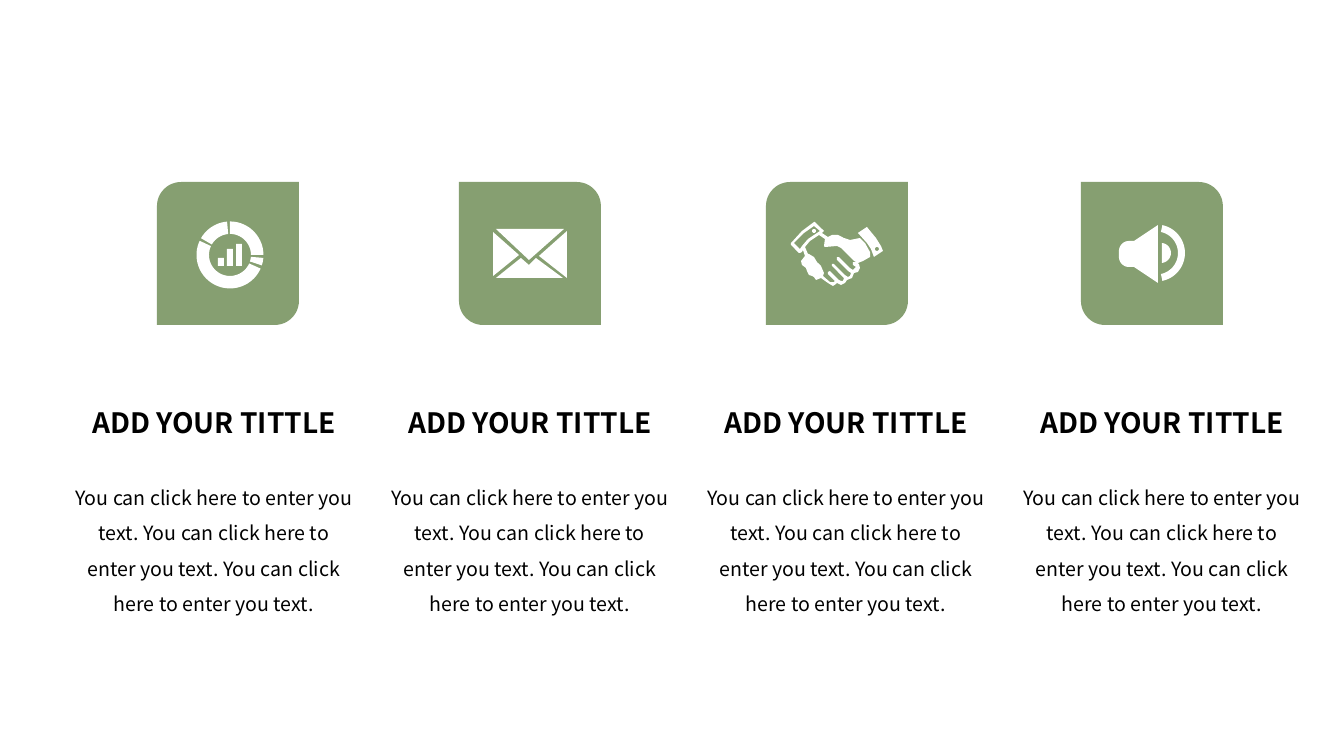
import math

import pptx
import pptx.dml.color
import pptx.enum.shapes
import pptx.enum.text
import pptx.util

SHAPE = pptx.enum.shapes.MSO_SHAPE
FONT = "Noto Sans CJK SC"
GREEN, WHITE, BLACK = "869F71", "FFFFFF", "000000"

TILE_LEFTS = (157, 459, 766, 1081)
TILE_TOP, TILE_W, TILE_H = 182, 142, 143
CAPTION_LEFT, CAPTION_STEP = 63, 316
CAPTION_TOP, CAPTION_W, CAPTION_H = 384, 302, 236
CORNER = 0.17

HEADING = "ADD YOUR TITTLE"
BODY = " ".join(["You can click here to enter you text."] * 3)

# Handshake outlines, in px from the tile's corner
HANDS = [
    (34, 71), (36, 70), (37, 68), (39, 74), (35, 79), (36, 83), (40, 86), (41, 89),
    (43, 93), (46, 94), (48, 95), (50, 98), (55, 96), (62, 101), (67, 104), (70, 102),
    (71, 101), (75, 103), (79, 101), (81, 98), (86, 96), (88, 91), (92, 90), (94, 86),
    (93, 82), (90, 80), (87, 80), (87, 83), (90, 85), (88, 87), (87, 88), (84, 86),
    (73, 75), (71, 75), (71, 78), (82, 89), (85, 91), (84, 94), (82, 95), (79, 93),
    (68, 82), (66, 82), (66, 84), (78, 96), (77, 99), (75, 99), (73, 98), (64, 89),
    (62, 90), (62, 92), (69, 99), (68, 100), (64, 100), (57, 94), (58, 91), (55, 84),
    (51, 80), (48, 75), (43, 72), (42, 72), (39, 65), (44, 59), (53, 53), (59, 57),
    (58, 64), (59, 65), (71, 64), (75, 66), (88, 79), (92, 81), (97, 79), (104, 75),
    (104, 70), (99, 61), (94, 56), (84, 58), (78, 56), (72, 53), (66, 53), (62, 55),
    (56, 51), (58, 49), (57, 48), (49, 40), (48, 40), (36, 49), (25, 61), (25, 63),
    (33, 71),
]
LEFT_CUFF_HOLE = [(38, 51), (48, 44), (54, 49), (42, 57), (36, 64), (34, 67), (28, 61)]
RIGHT_CUFF = [(101, 45), (92, 51), (101, 61), (105, 67), (108, 75), (117, 69), (115, 64),
              (110, 56)]
ENVELOPE = [
    [(34, 50), (60, 73), (34, 94)],
    [(37, 47), (105, 47), (70, 78)],
    [(37, 96), (62, 76), (70, 83), (77, 76), (104, 96)],
    [(80, 74), (108, 49), (108, 96)],
]


def px(length):
    return pptx.util.Emu(round(length * 914400 / 100.8))


def rgb(color):
    return pptx.dml.color.RGBColor.from_string(color)


def paint(part, color):
    part.shadow.inherit = False
    part.fill.solid()
    part.fill.fore_color.rgb = rgb(color)
    part.line.fill.background()
    return part


def preset(shapes, kind, left, top, width, height, color):
    return paint(shapes.add_shape(kind, px(left), px(top), px(width), px(height)), color)


def outline(shapes, left, top, *contours):
    """White outline; contours after the first are holes."""
    builder = None
    for contour in contours:
        points = [(px(x), px(y)) for x, y in contour]
        if builder is None:
            builder = shapes.build_freeform(*points[0])
        else:
            builder.move_to(*points[0])
        builder.add_line_segments(points[1:], close=True)
    return paint(builder.convert_to_shape(px(left), px(top)), WHITE)


def arc(cx, cy, radius, start, end):
    steps = max(4, math.ceil(abs(end - start) / 5))
    angles = [math.radians(start + (end - start) * i / steps) for i in range(steps + 1)]
    return [(cx + radius * math.cos(a), cy + radius * math.sin(a)) for a in angles]


def ring_segment(cx, cy, outer, inner, start, end):
    return arc(cx, cy, outer, start, end) + arc(cx, cy, inner, end, start)


# Icons, each placed from the corner of its tile
def chart_icon(shapes, left, top):
    for start, end in ((24, 205), (210, 265), (5, 18), (-90, 0)):
        outline(shapes, left, top, ring_segment(73, 73, 33.5, 21, start, end))
    for i, height in enumerate((8, 17, 22)):
        preset(shapes, SHAPE.RECTANGLE, left + 61 + 9 * i, top + 84 - height, 6, height, WHITE)


def envelope_icon(shapes, left, top):
    for panel in ENVELOPE:
        outline(shapes, left, top, panel)


def handshake_icon(shapes, left, top):
    outline(shapes, left, top, RIGHT_CUFF, arc(111, 67, 2, 360, 0))
    outline(shapes, left, top, HANDS, LEFT_CUFF_HOLE)
    preset(shapes, SHAPE.OVAL, left + 46, top + 47, 4, 4, WHITE)


def speaker_icon(shapes, left, top):
    horn = [(53, 85), (77, 101), (77, 43), (53, 59)]
    back = arc(48, 69, 10, 270, 180) + arc(48, 75, 10, 180, 90)
    outline(shapes, left, top, horn + back)
    outline(shapes, left, top, arc(80, 71, 10, -85, 85))
    outline(shapes, left, top, ring_segment(75.5, 71, 28.5, 21.5, -78, 78))


def tile(slide, left, top, draw_icon, flipped):
    leaf = preset(slide.shapes, SHAPE.ROUND_2_DIAG_RECTANGLE, left, top, TILE_W, TILE_H, GREEN)
    leaf.adjustments[0] = 0 if flipped else CORNER
    leaf.adjustments[1] = CORNER if flipped else 0
    draw_icon(slide.shapes.add_group_shape().shapes, left, top)


def write(paragraph, text, size, bold=False, before=0):
    paragraph.alignment = pptx.enum.text.PP_ALIGN.CENTER
    paragraph.line_spacing = 1.5
    paragraph.space_before = pptx.util.Pt(before)
    run = paragraph.add_run()
    run.text = text
    run.font.name = FONT
    run.font.size = pptx.util.Pt(size)
    run.font.bold = bold
    run.font.color.rgb = rgb(BLACK)


def caption(slide, left, top, width, height):
    box = slide.shapes.add_textbox(px(left), px(top), px(width), px(height))
    frame = box.text_frame
    frame.word_wrap = True
    frame.auto_size = pptx.enum.text.MSO_AUTO_SIZE.SHAPE_TO_FIT_TEXT
    write(frame.paragraphs[0], HEADING, size=20, bold=True)
    write(frame.add_paragraph(), BODY, size=14, before=25)


def main():
    deck = pptx.Presentation()
    deck.slide_width, deck.slide_height = px(1344), px(756)
    slide = deck.slides.add_slide(deck.slide_layouts[6])
    icons = (chart_icon, envelope_icon, handshake_icon, speaker_icon)
    for i, (left, draw_icon) in enumerate(zip(TILE_LEFTS, icons)):
        tile(slide, left, TILE_TOP, draw_icon, flipped=i % 2 == 1)
        caption(slide, CAPTION_LEFT + CAPTION_STEP * i, CAPTION_TOP, CAPTION_W, CAPTION_H)
    deck.save("out.pptx")


if __name__ == "__main__":
    main()
